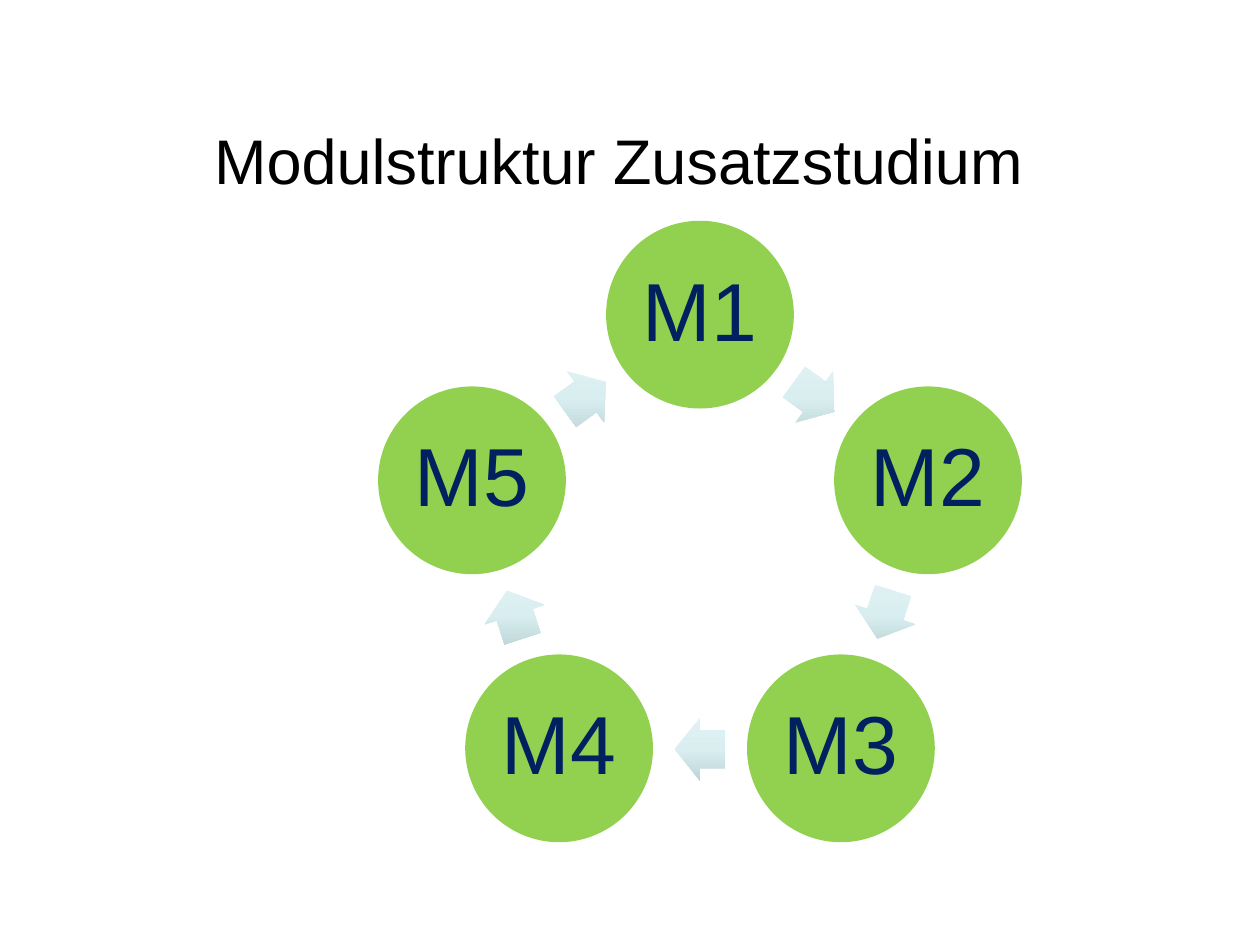
import math
from dataclasses import dataclass
from typing import Any

import pptx
import pptx.dml.color
import pptx.enum.shapes
import pptx.enum.text
import pptx.oxml
import pptx.oxml.ns
import pptx.util

Pt = pptx.util.Pt
RGB = pptx.dml.color.RGBColor
Shapes = pptx.enum.shapes.MSO_SHAPE
Text = pptx.enum.text


@dataclass(frozen=True)
class Theme:
    font: str = "Arial"
    title_color: str = "000000"
    title_size: float = 36
    module_color: str = "002060"
    module_size: float = 47
    module_fill: str = "92D050"
    arrow_stops: tuple = ((0, "E2F1F3"), (50, "D8EEF0"), (100, "BED5D7"))


@dataclass(frozen=True)
class Ring:
    center_x: float
    center_y: float
    module_radius: float
    arrow_radius: float

    def point(self, radius: float, angle: float) -> tuple[float, float]:
        turn = math.radians(angle)
        return (self.center_x + radius * math.sin(turn),
                self.center_y - radius * math.cos(turn))


@dataclass(frozen=True)
class Module:
    label: str
    angle: float


THEME = Theme()
RING = Ring(center_x=400, center_y=316.8, module_radius=137, arrow_radius=111.3)
MODULE_LABELS = ("M1", "M2", "M3", "M4", "M5")
STEP = 360 / len(MODULE_LABELS)
MODULE_DIAMETER = 107.3
ARROW_WIDTH, ARROW_HEIGHT = 28.8, 36


def apply_format(target: Any, values: dict[str, Any]) -> None:
    for attribute, value in values.items():
        setattr(target, attribute, value)


def format_font(font: Any, size: float, color: str) -> None:
    apply_format(font, {"name": THEME.font, "size": Pt(size), "bold": False})
    font.color.rgb = RGB.from_string(color)


def add_centered(slide: Any, preset: Any, center: tuple[float, float],
                 width: float, height: float) -> Any:
    x, y = center
    shape = slide.shapes.add_shape(
        preset, Pt(x - width / 2), Pt(y - height / 2), Pt(width), Pt(height))
    shape.shadow.inherit = False
    shape.line.fill.background()
    return shape


def draw_title(slide: Any, wording: str) -> None:
    title = slide.shapes.title
    apply_format(title, {"left": Pt(113), "top": Pt(65.5),
                         "width": Pt(481), "height": Pt(51)})
    frame = title.text_frame
    frame.text = wording
    apply_format(frame, {"word_wrap": False,
                         "auto_size": Text.MSO_AUTO_SIZE.SHAPE_TO_FIT_TEXT,
                         "vertical_anchor": Text.MSO_ANCHOR.MIDDLE})
    format_font(frame.paragraphs[0].runs[0].font, THEME.title_size, THEME.title_color)


def draw_module(slide: Any, module: Module) -> None:
    circle = add_centered(slide, Shapes.OVAL,
                          RING.point(RING.module_radius, module.angle),
                          MODULE_DIAMETER, MODULE_DIAMETER)
    circle.fill.solid()
    circle.fill.fore_color.rgb = RGB.from_string(THEME.module_fill)
    frame = circle.text_frame
    frame.text = module.label
    apply_format(frame, {"word_wrap": False,
                         "vertical_anchor": Text.MSO_ANCHOR.MIDDLE,
                         "margin_left": Pt(5), "margin_right": Pt(5),
                         "margin_top": Pt(5), "margin_bottom": Pt(5)})
    label = frame.paragraphs[0]
    apply_format(label, {"alignment": Text.PP_ALIGN.CENTER, "line_spacing": 0.9})
    format_font(label.runs[0].font, THEME.module_size, THEME.module_color)


def draw_arrow(slide: Any, angle: float) -> None:
    arrow = add_centered(slide, Shapes.RIGHT_ARROW,
                         RING.point(RING.arrow_radius, angle),
                         ARROW_WIDTH, ARROW_HEIGHT)
    arrow.rotation = angle
    arrow.adjustments[0], arrow.adjustments[1] = 0.6, 0.5
    stops = "".join(
        f'<a:gs pos="{position * 1000}"><a:srgbClr val="{color}"/></a:gs>'
        for position, color in THEME.arrow_stops)
    gradient = pptx.oxml.parse_xml(
        f'<a:gradFill {pptx.oxml.ns.nsdecls("a")} rotWithShape="0">'
        f'<a:gsLst>{stops}</a:gsLst><a:lin ang="5400000" scaled="0"/></a:gradFill>')
    arrow.element.spPr.find(pptx.oxml.ns.qn("a:prstGeom")).addnext(gradient)


def main() -> None:
    presentation = pptx.Presentation()
    apply_format(presentation, {"slide_width": Pt(720), "slide_height": Pt(540)})
    slide = presentation.slides.add_slide(presentation.slide_layouts[5])
    draw_title(slide, "Modulstruktur Zusatzstudium")
    for index, label in enumerate(MODULE_LABELS):
        module = Module(label, index * STEP)
        draw_module(slide, module)
        draw_arrow(slide, module.angle + STEP / 2)
    presentation.save("out.pptx")


if __name__ == "__main__":
    main()
